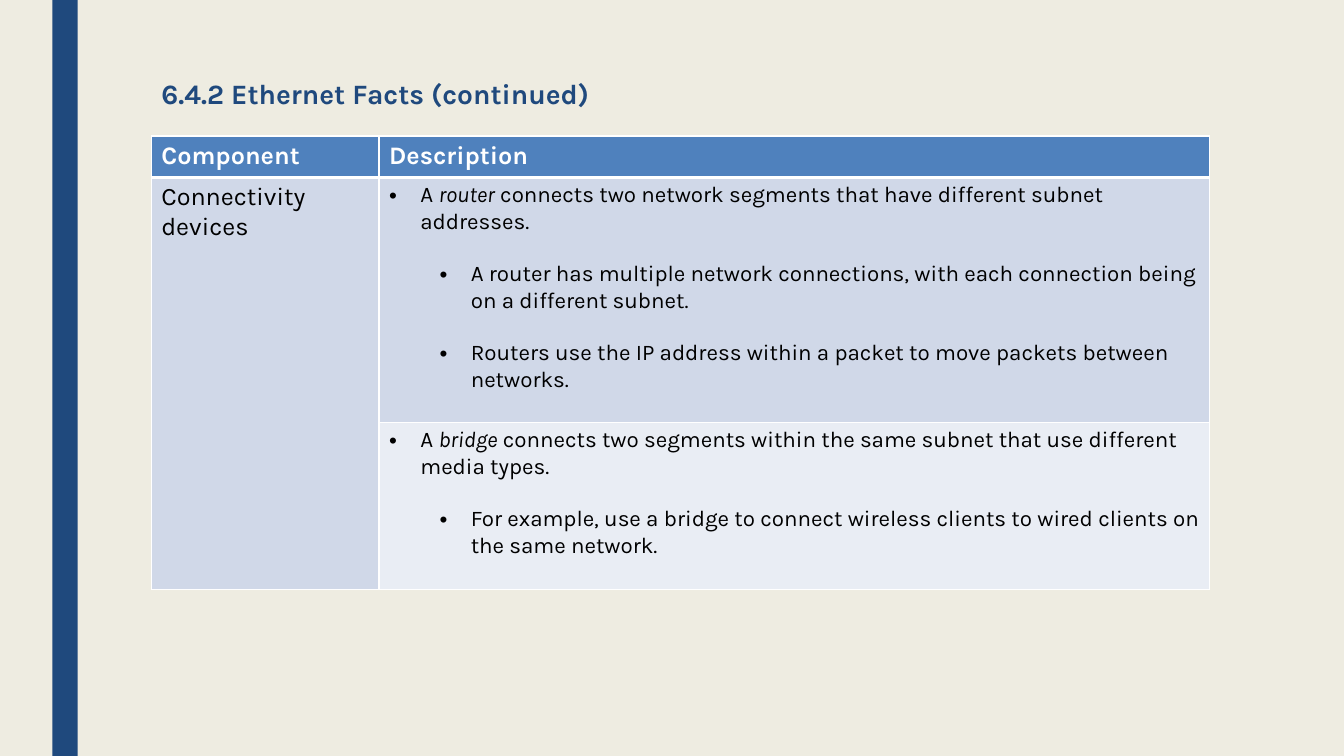
from lxml.etree import SubElement
from pptx import Presentation
from pptx.dml.color import RGBColor
from pptx.enum.shapes import MSO_SHAPE
from pptx.enum.text import MSO_ANCHOR, PP_ALIGN
from pptx.oxml.ns import qn
from pptx.util import Inches, Pt

TITLE = "6.4.2 Ethernet Facts (continued)"
HEADINGS = ["Component", "Description"]
COMPONENT = "Connectivity devices"
DESCRIPTIONS = [
    [
        (0, ["A ", "router", " connects two network segments that have different subnet addresses."]),
        (1, ["A router has multiple network connections, with each connection being on a different subnet."]),
        (1, ["Routers use the IP address within a packet to move packets between networks."]),
    ],
    [
        (0, ["A ", "bridge", " connects two segments within the same subnet that use different media types."]),
        (1, ["For example, use a bridge to connect wireless clients to wired clients on the same network."]),
    ],
]

FONT = "Karla"
CREAM = RGBColor(0xEE, 0xEC, 0xE1)
NAVY = RGBColor(0x1F, 0x49, 0x7D)
BLUE = RGBColor(0x4F, 0x81, 0xBD)
BAND_DARK = RGBColor(0xD0, 0xD8, 0xE8)
BAND_LIGHT = RGBColor(0xE9, 0xED, 0xF4)
WHITE = RGBColor(0xFF, 0xFF, 0xFF)
BLACK = RGBColor(0, 0, 0)

LEFT, WIDTH = 1.5, 10.5
COLUMN_WIDTHS = [2.26, 8.24]
ROW_HEIGHTS = [0.41, 2.43, 1.66]
ROW_FILLS = [BLUE, BAND_DARK, BAND_LIGHT]
BULLET_HANG = 0.31
LEVEL_INDENT = 0.5
ITEM_GAP = Pt(19)


def style(paragraph, size, color, bold=False):
    paragraph.font.name = FONT
    paragraph.font.size = Pt(size)
    paragraph.font.bold = bold
    paragraph.font.color.rgb = color


def add_borders(cell, top, bottom):
    properties = cell._tc.get_or_add_tcPr()
    for side, points in (("L", 1), ("R", 1), ("T", top), ("B", bottom)):
        border = SubElement(properties, qn(f"a:ln{side}"), w=str(Pt(points)))
        fill = SubElement(border, qn("a:solidFill"))
        SubElement(fill, qn("a:srgbClr"), val=str(WHITE))


def add_bullet(paragraph, level):
    paragraph.level = level
    properties = paragraph._p.get_or_add_pPr()
    properties.set("marL", str(Inches(BULLET_HANG + LEVEL_INDENT * level)))
    properties.set("indent", str(Inches(-BULLET_HANG)))
    SubElement(properties, qn("a:buFont"), typeface="Arial")
    SubElement(properties, qn("a:buChar"), char="•")


def write_description(cell, items):
    for position, (level, pieces) in enumerate(items):
        frame = cell.text_frame
        paragraph = frame.add_paragraph() if position else frame.paragraphs[0]
        add_bullet(paragraph, level)
        if position:
            paragraph.space_before = ITEM_GAP
        style(paragraph, 16, BLACK)
        for index, piece in enumerate(pieces):
            run = paragraph.add_run()
            run.text = piece
            if index == 1:
                run.font.italic = True


def main():
    deck = Presentation()
    deck.slide_width, deck.slide_height = Inches(13.33), Inches(7.5)
    slide = deck.slides.add_slide(deck.slide_layouts[5])
    slide.background.fill.solid()
    slide.background.fill.fore_color.rgb = CREAM

    stripe = slide.shapes.add_shape(
        MSO_SHAPE.RECTANGLE, Inches(0.52), 0, Inches(0.25), deck.slide_height)
    stripe.shadow.inherit = False
    stripe.fill.solid()
    stripe.fill.fore_color.rgb = NAVY
    stripe.line.fill.background()

    title = slide.shapes.title
    title.left, title.top = Inches(LEFT), Inches(0.75)
    title.width, title.height = Inches(WIDTH), Inches(1.62)
    title.text_frame.text = TITLE
    title.text_frame.vertical_anchor = MSO_ANCHOR.TOP
    heading = title.text_frame.paragraphs[0]
    heading.alignment = PP_ALIGN.LEFT
    heading.line_spacing = 0.89
    style(heading, 20, NAVY, bold=True)

    table = slide.shapes.add_table(
        len(ROW_HEIGHTS), len(COLUMN_WIDTHS), Inches(LEFT), Inches(1.35),
        Inches(WIDTH), Inches(sum(ROW_HEIGHTS))).table
    for column, width in zip(table.columns, COLUMN_WIDTHS):
        column.width = Inches(width)
    for number, (row, height) in enumerate(zip(table.rows, ROW_HEIGHTS)):
        row.height = Inches(height)
        for cell in row.cells:
            add_borders(cell, 3 if number == 1 else 1, 3 if number == 0 else 1)
            cell.fill.solid()
            cell.fill.fore_color.rgb = ROW_FILLS[number]

    for column, label in enumerate(HEADINGS):
        cell = table.cell(0, column)
        cell.text = label
        style(cell.text_frame.paragraphs[0], 18, WHITE, bold=True)

    component = table.cell(1, 0)
    component.merge(table.cell(2, 0))
    component.text = COMPONENT
    style(component.text_frame.paragraphs[0], 18, BLACK)

    for number, items in enumerate(DESCRIPTIONS, start=1):
        write_description(table.cell(number, 1), items)

    deck.save("out.pptx")


if __name__ == "__main__":
    main()
